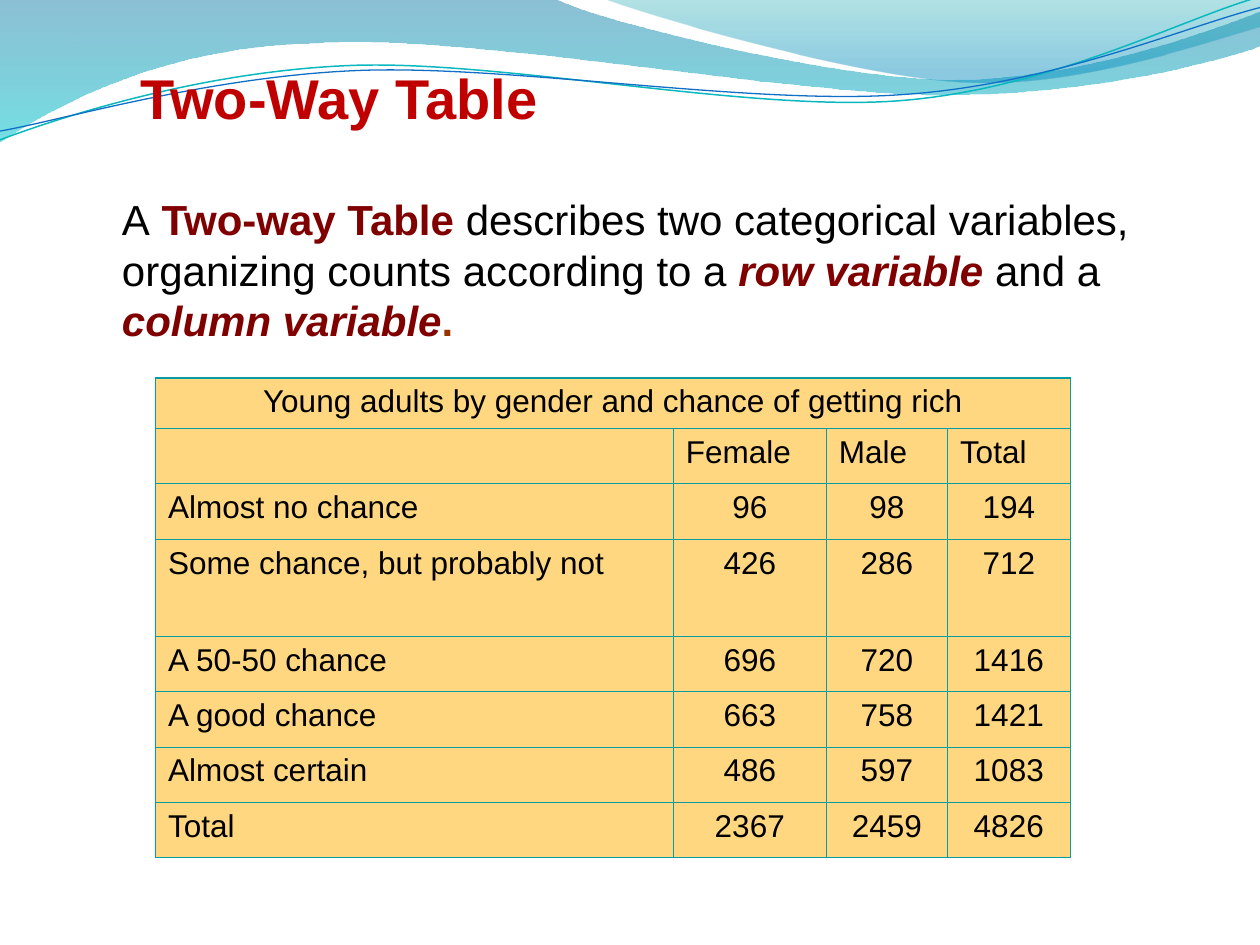
from dataclasses import dataclass
from math import cos, radians, sin

from lxml.etree import SubElement
from pptx import Presentation
from pptx.dml.color import RGBColor
from pptx.enum.text import MSO_AUTO_SIZE, PP_ALIGN
from pptx.oxml.ns import qn
from pptx.util import Inches, Pt


@dataclass(frozen=True)
class Theme:
    font: str = "Arial"
    title_size: int = 32
    body_size: int = 24
    table_size: int = 18
    ink: str = "000000"
    title: str = "C00000"
    term: str = "800000"
    full_stop: str = "993300"
    cell: str = "FFD780"
    border: str = "069CA3"
    border_width: float = 0.75
    # (position, colour, opacity in percent), from top to bottom
    wide_wave: tuple = ((0, "0074A1", 45), (1, "00C6CF", 55))
    corner_wave: tuple = ((0, "00A1A9", 30), (0.8, "008BBF", 45))
    teal_line: str = "0AB8BF"
    blue_line: str = "0F6FC6"
    line_tilt: float = -2.7


def turn(point, center, degrees):
    """The point turned clockwise about the center."""
    angle = radians(degrees)
    dx, dy = point[0] - center[0], point[1] - center[1]
    return (center[0] + dx * cos(angle) - dy * sin(angle),
            center[1] + dx * sin(angle) + dy * cos(angle))


class SlideBuilder:
    """Draws on a grid of 100 columns by 75 rows, each a tenth of an inch."""

    def __init__(self, slide, theme):
        self.slide = slide
        self.theme = theme

    def grid(self, *cells):
        return [Inches(cell / 10) for cell in cells]

    def style(self, run, size, color, bold=False, italic=False):
        font = run.font
        font.name, font.size = self.theme.font, Pt(size)
        font.bold, font.italic = bold, italic
        font.color.rgb = RGBColor.from_string(color)

    def outline(self, start, segments, close):
        """Segments hold one point for a straight line, three for a cubic curve."""
        points = [self.grid(*point) for segment in segments for point in segment]
        builder = self.slide.shapes.build_freeform(*self.grid(*start), scale=1.0)
        builder.add_line_segments(points, close=close)
        shape = builder.convert_to_shape()
        shape.shadow.inherit = False
        lines = iter(list(shape.element.spPr.iter(qn("a:lnTo"))))
        for segment in segments:
            members = [next(lines) for _ in segment]
            if len(members) == 3:
                bezier = SubElement(members[0].getparent(), qn("a:cubicBezTo"))
                members[0].addprevious(bezier)
                for member in members:
                    bezier.append(member[0])
                    member.getparent().remove(member)
        return shape

    def wave(self, start, segments, stops):
        shape = self.outline(start, segments, close=True)
        shape.line.fill.background()
        shape.fill.gradient()
        shape.fill.gradient_angle = 270
        for stop, (position, color, _) in zip(shape.fill.gradient_stops, stops):
            stop.position = position
            stop.color.rgb = RGBColor.from_string(color)
        colors = shape.element.spPr.iter(qn("a:srgbClr"))
        for color, (_, _, opacity) in zip(list(colors), stops):
            SubElement(color, qn("a:alpha"), val=str(opacity * 1000))

    def tilted_curve(self, start, segments, center, color, width):
        tilt = self.theme.line_tilt
        level = [[turn(point, center, -tilt) for point in segment]
                 for segment in segments]
        shape = self.outline(turn(start, center, -tilt), level, close=False)
        shape.rotation = tilt
        shape.fill.background()
        shape.line.color.rgb = RGBColor.from_string(color)
        shape.line.width = Pt(width)

    def text(self, box, size, parts):
        """Parts are (text, colour, bold, italic)."""
        frame = self.slide.shapes.add_textbox(*self.grid(*box)).text_frame
        frame.word_wrap = True
        frame.auto_size = MSO_AUTO_SIZE.SHAPE_TO_FIT_TEXT
        for words, *look in parts:
            run = frame.paragraphs[0].add_run()
            run.text = words
            self.style(run, size, *look)

    def cell(self, cell, content, centred):
        properties = cell._tc.get_or_add_tcPr()
        for side in ("lnL", "lnR", "lnT", "lnB"):
            edge = SubElement(properties, qn(f"a:{side}"),
                              w=str(Pt(self.theme.border_width)))
            fill = SubElement(edge, qn("a:solidFill"))
            SubElement(fill, qn("a:srgbClr"), val=self.theme.border)
        cell.fill.solid()
        cell.fill.fore_color.rgb = RGBColor.from_string(self.theme.cell)
        if content == "":
            return
        paragraph = cell.text_frame.paragraphs[0]
        paragraph.text = str(content)
        if centred:
            paragraph.alignment = PP_ALIGN.CENTER
        self.style(paragraph.runs[0], self.theme.table_size, self.theme.ink)

    def table(self, box, widths, heights, caption, rows):
        frame = self.slide.shapes.add_table(len(heights), len(widths), *self.grid(*box))
        table = frame.table
        table.first_row = table.horz_banding = False
        for column, width in zip(table.columns, self.grid(*widths)):
            column.width = width
        for row, height in zip(table.rows, self.grid(*heights)):
            row.height = height
        frame.height = self.grid(box[3])[0]
        table.cell(0, 0).merge(table.cell(0, len(widths) - 1))
        self.cell(table.cell(0, 0), caption, centred=True)
        for r, contents in enumerate(rows, start=1):
            for c, content in enumerate(contents):
                self.cell(table.cell(r, c), content, centred=isinstance(content, int))


def main():
    presentation = Presentation()
    presentation.slide_width, presentation.slide_height = Inches(10), Inches(7.5)
    theme = Theme()
    page = SlideBuilder(
        presentation.slides.add_slide(presentation.slide_layouts[6]), theme)

    page.wave((0, 0), [
        [(44, -0.1)],
        [(47.6, 1.7), (66.4, 6.3), (75.8, 6.3)],
        [(85.3, 6.3), (95.8, 2.6), (100, 0.9)],
        [(100.1, 3.6)],
        [(98.3, 4.4), (87, 7.6), (74.6, 7.5)],
        [(62.2, 7.5), (38.2, 2.8), (25.7, 3.4)],
        [(12.9, 3.6), (4.6, 8.3), (-0.1, 11.3)],
    ], theme.wide_wave)
    page.wave((47.9, -0.1), [
        [(50.9, 1.1), (68.2, 6.2), (76.9, 6.5)],
        [(85.6, 6.9), (96.1, 3.2), (100, 2.1)],
        [(100, 0)],
    ], theme.corner_wave)
    page.tilted_curve((0, 11.1), [
        [(4.8, 9.3), (15.8, 5.7), (27.7, 5.2)],
        [(39.5, 4.7), (59.3, 8.9), (71.3, 8)],
        [(83.3, 7.1), (93.8, 1.5), (99.8, -0.2)],
    ], (49.9, 5.75), theme.teal_line, 0.85)
    page.tilted_curve((0, 10.4), [
        [(4.7, 9.6), (16.4, 6.1), (28.3, 5.6)],
        [(40.3, 5.1), (59.7, 8.4), (71.7, 7.5)],
        [(83.6, 6.7), (94.1, 2.1), (100, 0.6)],
    ], (49.95, 5.9), theme.blue_line, 0.75)

    page.text((10.14, 4.54, 74.8, 6.4), theme.title_size,
              [("Two-Way Table", theme.title, True)])
    page.text((8.7, 14.9, 84.3, 13.1), theme.body_size, [
        ("A", theme.ink),
        (" Two-way Table", theme.term, True),
        (" describes two categorical variables, organizing counts according to a ",
         theme.ink),
        ("row variable", theme.term, True, True),
        (" and a ", theme.ink),
        ("column variable", theme.term, True, True),
        (".", theme.full_stop, True),
    ])

    page.table(
        (12.34, 30, 72.6, 38.2), widths=[41.1, 12.14, 9.62, 9.74],
        heights=[1.3, 4.4, 4.4, 7.7] + [4.4] * 4,
        caption="Young adults by gender and chance of getting rich",
        rows=[
            ["", "Female", "Male", "Total"],
            ["Almost no chance", 96, 98, 194],
            ["Some chance, but probably not", 426, 286, 712],
            ["A 50-50 chance", 696, 720, 1416],
            ["A good chance", 663, 758, 1421],
            ["Almost certain", 486, 597, 1083],
            ["Total", 2367, 2459, 4826],
        ])
    presentation.save("out.pptx")


if __name__ == "__main__":
    main()
